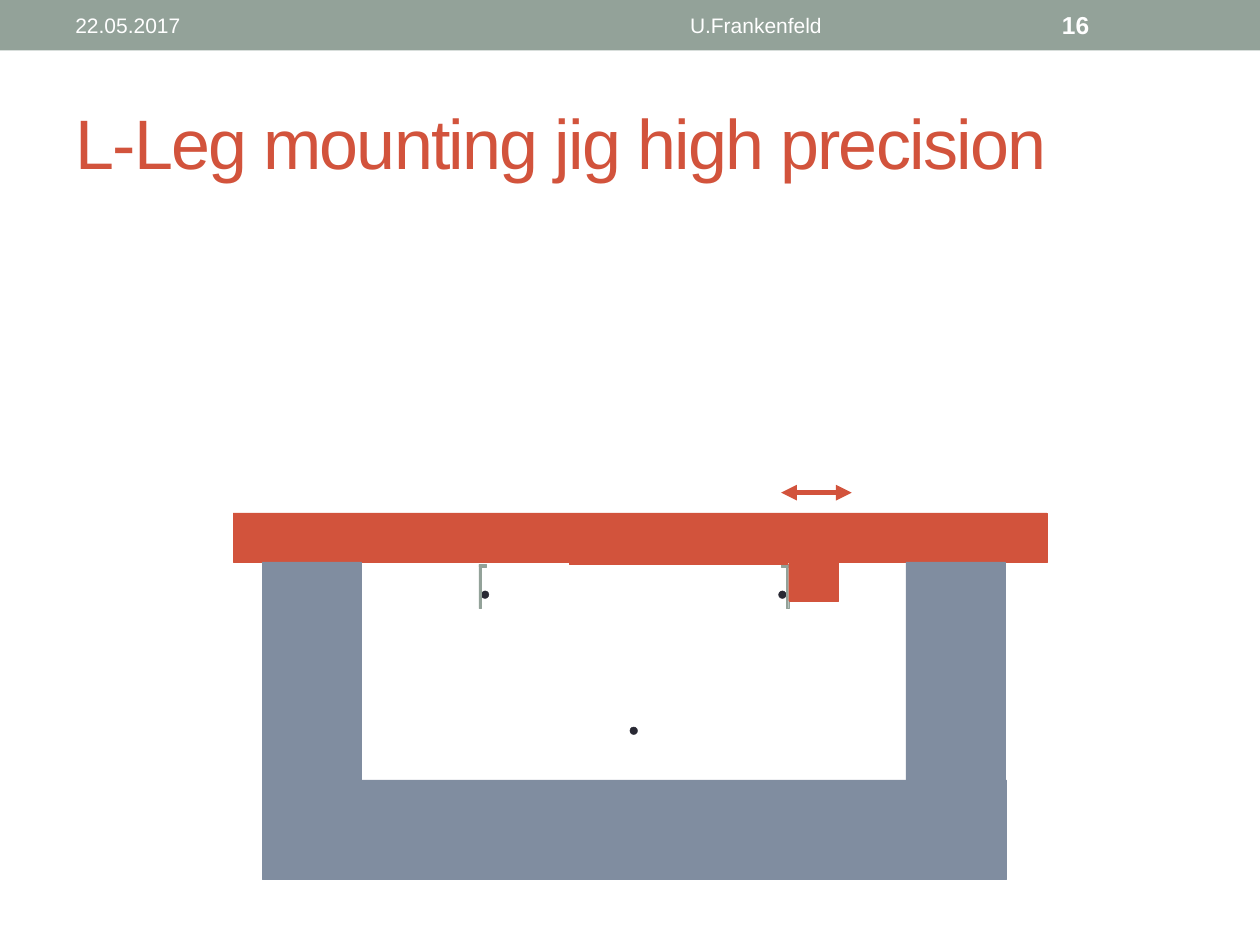
from lxml.etree import SubElement
from pptx import Presentation
from pptx.dml.color import RGBColor
from pptx.enum.shapes import MSO_CONNECTOR, MSO_SHAPE
from pptx.enum.text import MSO_ANCHOR, PP_ALIGN
from pptx.oxml.ns import qn
from pptx.util import Inches, Pt

SAGE = RGBColor(0x93, 0xA2, 0x99)
RED = RGBColor(0xD2, 0x53, 0x3C)
SLATE = RGBColor(0x80, 0x8D, 0xA0)
INK = RGBColor(0x29, 0x29, 0x34)
WHITE = RGBColor(0xFF, 0xFF, 0xFF)


def add_block(shapes, bounds, color, kind=MSO_SHAPE.RECTANGLE, outlined=True):
    block = shapes.add_shape(kind, *map(Inches, bounds))
    block.shadow.inherit = False
    block.fill.solid()
    block.fill.fore_color.rgb = color
    if outlined:
        block.line.color.rgb = color
        block.line.width = Pt(0.25)
    else:
        block.line.fill.background()


def add_pin(page, left, top):
    add_block(page.shapes, (left, top, 0.06, 0.06), INK, MSO_SHAPE.OVAL)


def add_leg(page, upright_left, foot_left):
    leg = page.shapes.add_group_shape()
    add_block(leg.shapes, (upright_left, 4.48, 0.02, 0.35), SAGE)
    add_block(leg.shapes, (foot_left, 4.48, 0.06, 0.02), SAGE)


def add_double_arrow(page, left, right, height):
    arrow = page.shapes.add_connector(
        MSO_CONNECTOR.STRAIGHT, Inches(left), Inches(height), Inches(right), Inches(height)
    )
    arrow.line.color.rgb = RED
    arrow.line.width = Pt(3)
    line = arrow.line._get_or_add_ln()
    for end in ("a:headEnd", "a:tailEnd"):
        SubElement(line, qn(end), type="triangle")
    SubElement(arrow._element.spPr, qn("a:effectLst"))


def add_text(page, bounds, text, size, color, align=PP_ALIGN.LEFT, bold=False, spacing=0):
    box = page.shapes.add_textbox(*map(Inches, bounds))
    frame = box.text_frame
    frame.word_wrap = True
    frame.vertical_anchor = MSO_ANCHOR.MIDDLE
    frame.text = text
    para = frame.paragraphs[0]
    para.alignment = align
    span = para.runs[0]
    span.font.name = "Arial"
    span.font.size = Pt(size)
    span.font.bold = bold
    span.font.color.rgb = color
    if spacing:
        span._r.get_or_add_rPr().set("spc", str(spacing * 100))


def add_jig(page):
    for left, top in ((3.82, 4.69), (6.18, 4.69), (5, 5.77)):
        add_pin(page, left, top)
    add_leg(page, 3.8, 3.8)
    add_leg(page, 6.24, 6.2)
    add_block(page.shapes, (1.85, 4.07, 6.46, 0.39), RED)
    for left in (2.08, 7.19):
        add_block(page.shapes, (left, 4.46, 0.79, 1.73), SLATE)
    add_block(page.shapes, (2.08, 6.19, 5.91, 0.79), SLATE)
    add_block(page.shapes, (6.26, 4.46, 0.39, 0.31), RED)
    add_double_arrow(page, 6.2, 6.76, 3.91)
    add_block(page.shapes, (4.52, 4.28, 1.73, 0.2), RED)


def main():
    deck = Presentation()
    deck.slide_width = Inches(10)
    deck.slide_height = Inches(7.5)
    page = deck.slides.add_slide(deck.slide_layouts[6])
    add_block(page.shapes, (0, 0, 10, 0.4), SAGE, outlined=False)
    add_text(page, (0.5, 0.58, 9, 1.08), "L-Leg mounting jig high precision", 40, RED, spacing=-1)
    add_jig(page)
    add_text(page, (0.5, 0.02, 3.17, 0.36), "22.05.2017", 12, WHITE)
    add_text(page, (3.75, 0.02, 4.5, 0.36), "U.Frankenfeld", 12, WHITE, PP_ALIGN.CENTER)
    add_text(page, (8.33, 0.02, 1.17, 0.36), "16", 14, WHITE, bold=True)
    deck.save("out.pptx")


if __name__ == "__main__":
    main()
